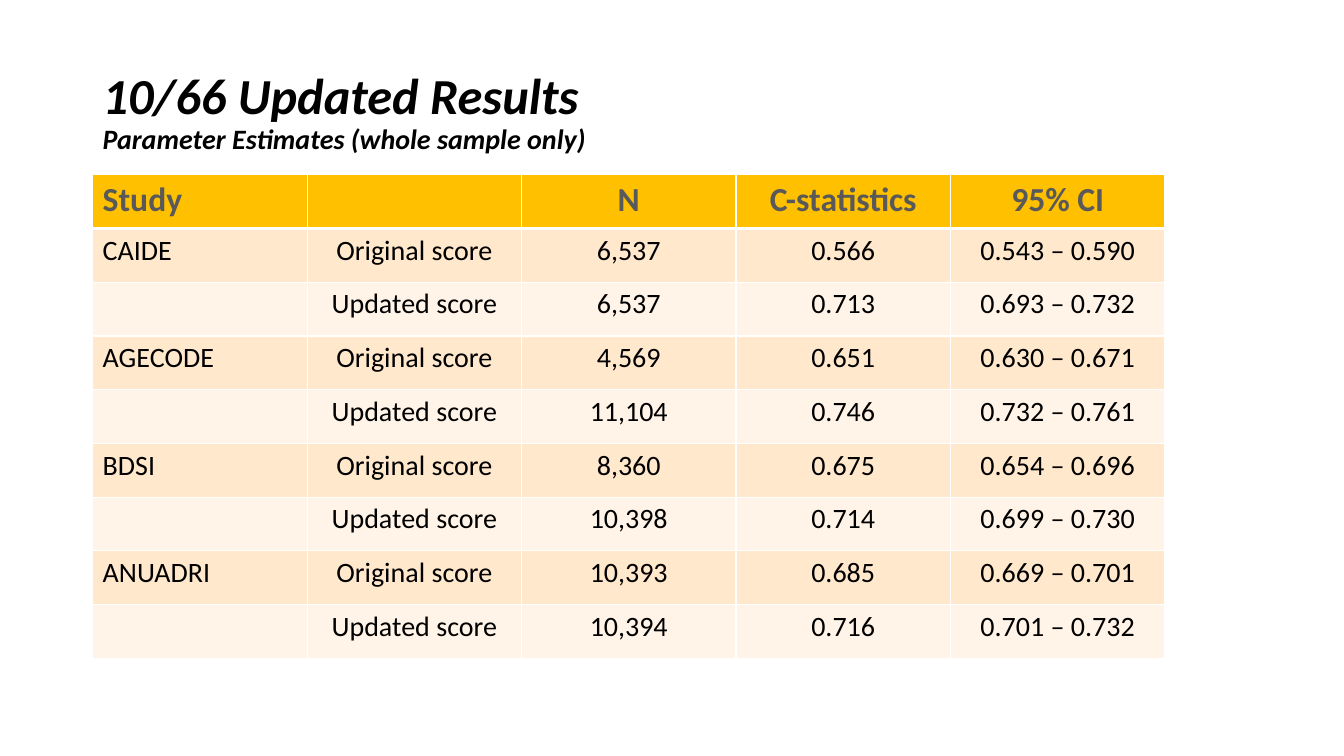
import pptx
import pptx.dml.color
import pptx.enum.text
import pptx.oxml.ns
import pptx.util
from lxml import etree

Pt = pptx.util.Pt
FONT = "Calibri"
COLORS = {
    "text": "000000",
    "header_text": "595959",
    "header_fill": "FFC000",
    "original_fill": "FFE8CC",
    "updated_fill": "FFF4E7",
    "border": "FFFFFF",
}
HEADER = ["Study", "", "N", "C-statistics", "95% CI"]
# Study, then (N, C-statistic, 95% CI) for the original and the updated score
STUDIES = [
    ("CAIDE", ("6,537", "0.566", "0.543 – 0.590"), ("6,537", "0.713", "0.693 – 0.732")),
    ("AGECODE", ("4,569", "0.651", "0.630 – 0.671"), ("11,104", "0.746", "0.732 – 0.761")),
    ("BDSI", ("8,360", "0.675", "0.654 – 0.696"), ("10,398", "0.714", "0.699 – 0.730")),
    ("ANUADRI", ("10,393", "0.685", "0.669 – 0.701"), ("10,394", "0.716", "0.701 – 0.732")),
]
LEFT = 66.2
COLUMN_WIDTH = 153.2
ROW_HEIGHT = 38.4


def rgb(name):
    return pptx.dml.color.RGBColor.from_string(COLORS[name])


def add_run(paragraph, text, size, color="text", bold=False, italic=False):
    run = paragraph.add_run()
    run.text = text
    run.font.name = FONT
    run.font.size = Pt(size)
    run.font.bold = bold
    run.font.italic = italic
    run.font.color.rgb = rgb(color)


def add_title(slide, title, subtitle):
    shape = slide.shapes.add_textbox(Pt(LEFT), Pt(28.8), Pt(828), Pt(104.4))
    frame = shape.text_frame
    frame.word_wrap = True
    frame.vertical_anchor = pptx.enum.text.MSO_ANCHOR.MIDDLE
    paragraph = frame.paragraphs[0]
    paragraph.line_spacing = 0.9
    add_run(paragraph, title, 36, bold=True, italic=True)
    paragraph.add_line_break()
    add_run(paragraph, subtitle, 20, bold=True, italic=True)


def add_border(cell, side, width):
    properties = cell._tc.get_or_add_tcPr()
    line = etree.SubElement(properties, pptx.oxml.ns.qn(f"a:ln{side}"), w=str(Pt(width)))
    fill = etree.SubElement(line, pptx.oxml.ns.qn("a:solidFill"))
    etree.SubElement(fill, pptx.oxml.ns.qn("a:srgbClr"), val=COLORS["border"])


def fill_cell(cell, text, row, column):
    is_header = row == 0
    # Borders: a thick rule parts the header from the body
    widths = {"L": 1, "R": 1, "T": 3 if row == 1 else 1, "B": 3 if is_header else 1}
    for side, width in widths.items():
        add_border(cell, side, width)

    cell.fill.solid()
    band = "original_fill" if row % 2 else "updated_fill"
    cell.fill.fore_color.rgb = rgb("header_fill" if is_header else band)

    if text:
        paragraph = cell.text_frame.paragraphs[0]
        if column > 0:
            paragraph.alignment = pptx.enum.text.PP_ALIGN.CENTER
        if is_header:
            add_run(paragraph, text, 24, "header_text", bold=True)
        else:
            add_run(paragraph, text, 20)


def add_results_table(slide, rows):
    row_count, column_count = len(rows), len(rows[0])
    table = slide.shapes.add_table(
        row_count, column_count, Pt(LEFT), Pt(124.8),
        Pt(COLUMN_WIDTH * column_count), Pt(ROW_HEIGHT * row_count)).table
    for table_column in table.columns:
        table_column.width = Pt(COLUMN_WIDTH)
    for row, values in enumerate(rows):
        table.rows[row].height = Pt(ROW_HEIGHT)
        for column, text in enumerate(values):
            fill_cell(table.cell(row, column), text, row, column)


def main():
    presentation = pptx.Presentation()
    presentation.slide_width = Pt(960)
    presentation.slide_height = Pt(540)
    slide = presentation.slides.add_slide(presentation.slide_layouts[6])

    # Heading
    add_title(slide, "10/66 Updated Results", "Parameter Estimates (whole sample only)")

    # Results: two rows for each study
    rows = [HEADER]
    for study, original, updated in STUDIES:
        rows.append([study, "Original score", *original])
        rows.append(["", "Updated score", *updated])
    add_results_table(slide, rows)

    presentation.save("out.pptx")


if __name__ == "__main__":
    main()
